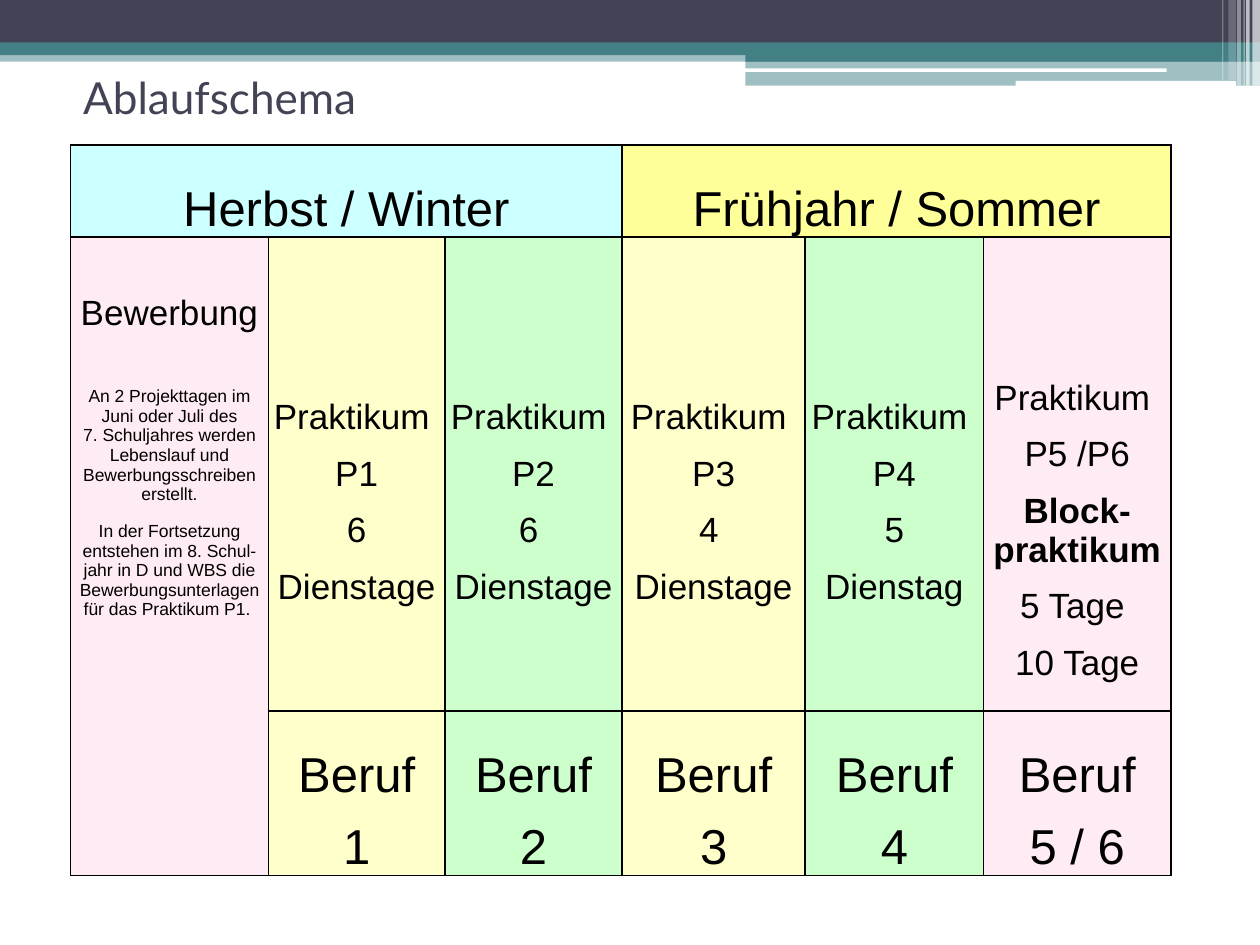
import pptx
import pptx.dml.color
import pptx.enum.shapes
import pptx.enum.text
import pptx.oxml
import pptx.oxml.ns
import pptx.util
from lxml import etree

Pt = pptx.util.Pt
MIDDLE = pptx.enum.text.MSO_ANCHOR.MIDDLE
TOP = pptx.enum.text.MSO_ANCHOR.TOP
CENTER = pptx.enum.text.PP_ALIGN.CENTER
LEFT = pptx.enum.text.PP_ALIGN.LEFT
RECT = pptx.enum.shapes.MSO_SHAPE.RECTANGLE
ROUNDED = pptx.enum.shapes.MSO_SHAPE.ROUNDED_RECTANGLE

NAVY, TEAL, WHITE, BLACK = "424456", "438086", "FFFFFF", "000000"
CYAN, YELLOW, CREAM, GREEN, PINK = "CCFFFF", "FFFF99", "FFFFCC", "CCFFCC", "FFEBF4"


def rgb(code):
    return pptx.dml.color.RGBColor.from_string(code)


def write(frame, text, size=20, font="Arial", color=BLACK, bold=False,
          align=CENTER, before=0, after=10):
    """Add one formatted paragraph, using the first one while the frame is empty."""
    paragraph = frame.add_paragraph() if frame.text else frame.paragraphs[0]
    paragraph.text = text
    paragraph.alignment = align
    paragraph.space_before, paragraph.space_after = Pt(before), Pt(after)
    for run in paragraph.runs:
        run.font.size, run.font.name, run.font.bold = Pt(size), font, bold
        run.font.color.rgb = rgb(color)


prs = pptx.Presentation()
prs.slide_width, prs.slide_height = Pt(720), Pt(540)
slide = prs.slides.add_slide(prs.slide_layouts[5])

# Banner: kind, left, top, width, height, colour, opacity in percent
banner = [
    (RECT, 0, 28.8, 720, 6.5, TEAL, 50),
    (RECT, 0, 0, 720, 24.5, NAVY, 100),
    (RECT, 0, 24.3, 720, 7.2, TEAL, 100),
    (RECT, 426, 28, 294, 7.2, TEAL, 100),
    (RECT, 426, 34.7, 294, 14.2, TEAL, 50),
    (ROUNDED, 425.5, 39.1, 241.2, 2, WHITE, 100),
    (ROUNDED, 580.3, 46.2, 126, 2.8, WHITE, 100),
    (RECT, 715.7, 0, 4.3, 49, WHITE, 65),
    (RECT, 712.1, 0, 2.1, 49, WHITE, 65),
    (RECT, 710.6, 0, 0.7, 49, WHITE, 60),
    (RECT, 707, 0, 2.1, 49, WHITE, 40),
    (RECT, 702, 0, 4.3, 46, WHITE, 20),
    (RECT, 698.4, 0, 0.7, 46, WHITE, 30),
]
for kind, left, top, width, height, color, opacity in banner:
    bar = slide.shapes.add_shape(kind, Pt(left), Pt(top), Pt(width), Pt(height))
    bar.shadow.inherit = False
    bar.fill.solid()
    bar.fill.fore_color.rgb = rgb(color)
    bar.line.fill.background()
    if opacity < 100:
        tint = bar.element.spPr.find(".//" + pptx.oxml.ns.qn("a:srgbClr"))
        etree.SubElement(tint, pptx.oxml.ns.qn("a:alpha"), val=str(opacity * 1000))

# Title, brought in front of the banner
title = slide.shapes.title
title.left, title.top, title.width, title.height = Pt(40.3), Pt(37.5), Pt(648), Pt(36)
title.text_frame.auto_size = pptx.enum.text.MSO_AUTO_SIZE.NONE
title.text_frame.vertical_anchor = MIDDLE
write(title.text_frame, "Ablaufschema", size=25.2, font="Lato", color=NAVY,
      align=LEFT, after=0)
title.element.getparent().append(title.element)

# Schedule table
column_widths = [113, 101, 101.2, 104.6, 102, 107]
row_heights = [52.5, 271, 93.8]
schedule = slide.shapes.add_table(
    3, 6, Pt(40.3), Pt(82.9), Pt(sum(column_widths)), Pt(sum(row_heights))).table
schedule.first_row = schedule.horz_banding = False
for column, width in zip(schedule.columns, column_widths):
    column.width = Pt(width)
for row, height in zip(schedule.rows, row_heights):
    row.height = Pt(height)

column_fills = [PINK, CREAM, GREEN, CREAM, GREEN, PINK]
cell_fills = [[CYAN] * 3 + [YELLOW] * 3, column_fills, column_fills]
for row, fills in zip(schedule.rows, cell_fills):
    for cell, color in zip(row.cells, fills):
        properties = cell._tc.get_or_add_tcPr()
        for side in ("lnL", "lnR", "lnT", "lnB"):
            border = etree.SubElement(
                properties, pptx.oxml.ns.qn("a:" + side), w=str(Pt(1)))
            ink = etree.SubElement(border, pptx.oxml.ns.qn("a:solidFill"))
            etree.SubElement(ink, pptx.oxml.ns.qn("a:srgbClr"), val=BLACK)
        cell.fill.solid()
        cell.fill.fore_color.rgb = rgb(color)
        cell.margin_left = cell.margin_right = cell.margin_bottom = Pt(0)
        cell.margin_top = Pt(21.2)
        cell.vertical_anchor = MIDDLE

for first, season in ((0, "Herbst / Winter"), (3, "Frühjahr / Sommer")):
    schedule.cell(0, first).merge(schedule.cell(0, first + 2))
    write(schedule.cell(0, first).text_frame, season, size=28)

application = schedule.cell(1, 0)
application.merge(schedule.cell(2, 0))
application.vertical_anchor = TOP
application.margin_top = Pt(32.3)
write(application.text_frame, "Bewerbung")
write(application.text_frame,
      "An 2 Projekttagen im Juni oder Juli des\v7. Schuljahres werden "
      "Lebenslauf und Bewerbungsschreiben erstellt.", size=10, before=21.2)
write(application.text_frame,
      "In der Fortsetzung entstehen im 8. Schul-jahr in D und WBS die "
      "Bewerbungsunterlagen für das Praktikum P1. ", size=10)

internships = [
    (["P1", "6", "Dienstage"], "1"),
    (["P2", "6 ", "Dienstage"], "2"),
    (["P3", "4 ", "Dienstage"], "3"),
    (["P4", "5", "Dienstag"], "4"),
    (["P5 /P6", "Block-praktikum", "5 Tage ", "10 Tage"], "5 / 6"),
]
for index, (details, job) in enumerate(internships, start=1):
    internship = schedule.cell(1, index)
    internship.margin_top = Pt(64.7 if index == 5 else 32.3)
    for line in ["Praktikum "] + details:
        write(internship.text_frame, line, bold=line.startswith("Block"))
    for line in ("Beruf", job):
        write(schedule.cell(2, index).text_frame, line, size=28)

prs.save("out.pptx")
